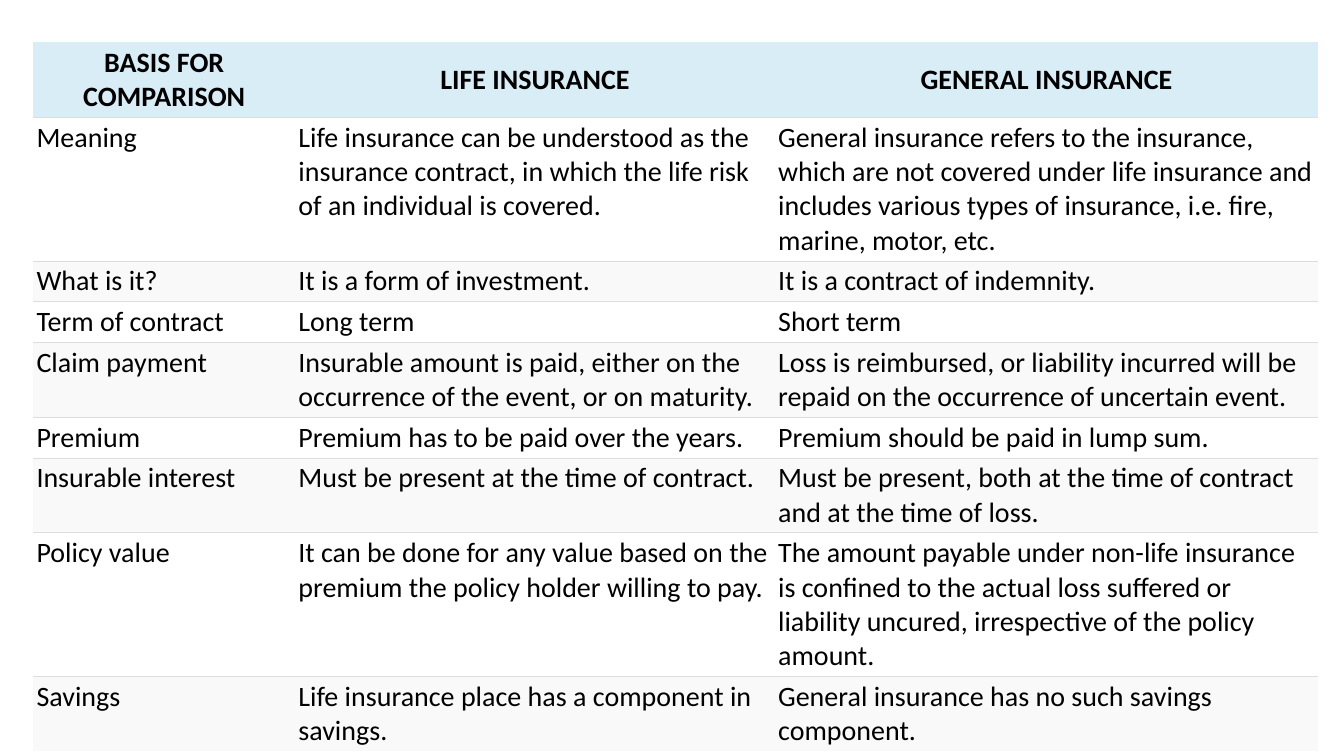
from dataclasses import dataclass

import lxml.etree
import pptx
import pptx.dml.color
import pptx.enum.text
import pptx.oxml.ns
import pptx.table
import pptx.util

Cm = pptx.util.Cm
RGB = pptx.dml.color.RGBColor


@dataclass(frozen=True)
class Theme:
    font: str = "Calibri"
    text_size: float = 20
    text: str = "000000"
    header_fill: str = "D9EDF7"
    row_fills: tuple[str, str] = ("FFFFFF", "F9F9F9")
    rule: str = "DDDDDD"
    rule_width: float = 0.75
    cell_margin: float = 0.08


@dataclass(frozen=True)
class ComparisonRow:
    height: float
    basis: str
    life: str
    general: str


THEME = Theme()
COLUMN_WIDTHS = (6.6, 12.09, 13.69)
ROWS = (
    ComparisonRow(0.99, "BASIS FOR COMPARISON", "LIFE INSURANCE", "GENERAL INSURANCE"),
    ComparisonRow(
        2.74, "Meaning",
        "Life insurance can be understood as the insurance contract, in which "
        "the life risk of an individual is covered.",
        "General insurance refers to the insurance, which are not covered under life "
        "insurance and includes various types of insurance, i.e. fire, marine, motor, etc.",
    ),
    ComparisonRow(0.99, "What is it?", "It is a form of investment.",
                  "It is a contract of indemnity."),
    ComparisonRow(0.61, "Term of contract", "Long term", "Short term"),
    ComparisonRow(
        1.12, "Claim payment",
        "Insurable amount is paid, either on the occurrence of the event, or on maturity.",
        "Loss is reimbursed, or liability incurred will be repaid on the occurrence "
        "of uncertain event.",
    ),
    ComparisonRow(0.99, "Premium", "Premium has to be paid over the years.",
                  "Premium should be paid in lump sum."),
    ComparisonRow(
        1.78, "Insurable interest", "Must be present at the time of contract.",
        "Must be present, both at the time of contract and at the time of loss.",
    ),
    ComparisonRow(
        1.9, "Policy value",
        "It can be done for any value based on the premium the policy holder willing to pay.",
        "The amount payable under non-life insurance is confined to the actual loss "
        "suffered or liability uncured, irrespective of the policy amount.",
    ),
    ComparisonRow(
        1.37, "Savings", "Life insurance place has a component in savings.",
        "General insurance has no such savings component.",
    ),
)


def set_borders(cell: pptx.table._Cell, ruled_sides: str) -> None:
    """Rule the given sides (letters of L, R, T, B) and clear the others."""
    qn = pptx.oxml.ns.qn
    properties = cell._tc.get_or_add_tcPr()
    for position, side in enumerate("LRTB"):
        border = lxml.etree.Element(qn(f"a:ln{side}"))
        if side in ruled_sides:
            border.set("w", str(pptx.util.Pt(THEME.rule_width)))
            fill = lxml.etree.SubElement(border, qn("a:solidFill"))
            lxml.etree.SubElement(fill, qn("a:srgbClr"), val=THEME.rule)
        else:
            lxml.etree.SubElement(border, qn("a:noFill"))
        properties.insert(position, border)


def fill_cell(cell: pptx.table._Cell, wording: str, row_index: int) -> None:
    is_header = row_index == 0
    cell.margin_left = cell.margin_right = Cm(THEME.cell_margin)
    cell.margin_top = cell.margin_bottom = Cm(THEME.cell_margin)
    anchors = pptx.enum.text.MSO_ANCHOR
    cell.vertical_anchor = anchors.MIDDLE if is_header else anchors.TOP

    # Wording
    cell.text_frame.text = wording
    paragraph = cell.text_frame.paragraphs[0]
    alignments = pptx.enum.text.PP_ALIGN
    paragraph.alignment = alignments.CENTER if is_header else alignments.LEFT
    font = paragraph.runs[0].font
    font.name = THEME.font
    font.size = pptx.util.Pt(THEME.text_size)
    font.bold = is_header
    font.color.rgb = RGB.from_string(THEME.text)

    # Background and horizontal rules
    cell.fill.solid()
    background = THEME.header_fill if is_header else THEME.row_fills[(row_index - 1) % 2]
    cell.fill.fore_color.rgb = RGB.from_string(background)
    is_last = row_index == len(ROWS) - 1
    set_borders(cell, ("" if is_header else "T") + ("" if is_last else "B"))


def main() -> None:
    presentation = pptx.Presentation()
    presentation.slide_width = Cm(33.87)
    presentation.slide_height = Cm(19.05)
    slide = presentation.slides.add_slide(presentation.slide_layouts[6])

    # Insurance comparison table
    frame_height = Cm(17.63)
    comparison_frame = slide.shapes.add_table(
        len(ROWS), len(COLUMN_WIDTHS), Cm(0.84), Cm(1.07),
        Cm(sum(COLUMN_WIDTHS)), frame_height,
    )
    comparison = comparison_frame.table
    comparison.horz_banding = False
    for column, width in zip(comparison.columns, COLUMN_WIDTHS):
        column.width = Cm(width)
    for row_index, entry in enumerate(ROWS):
        comparison.rows[row_index].height = Cm(entry.height)
        for column_index, wording in enumerate((entry.basis, entry.life, entry.general)):
            fill_cell(comparison.cell(row_index, column_index), wording, row_index)
    comparison_frame.height = frame_height

    presentation.save("out.pptx")


if __name__ == "__main__":
    main()
